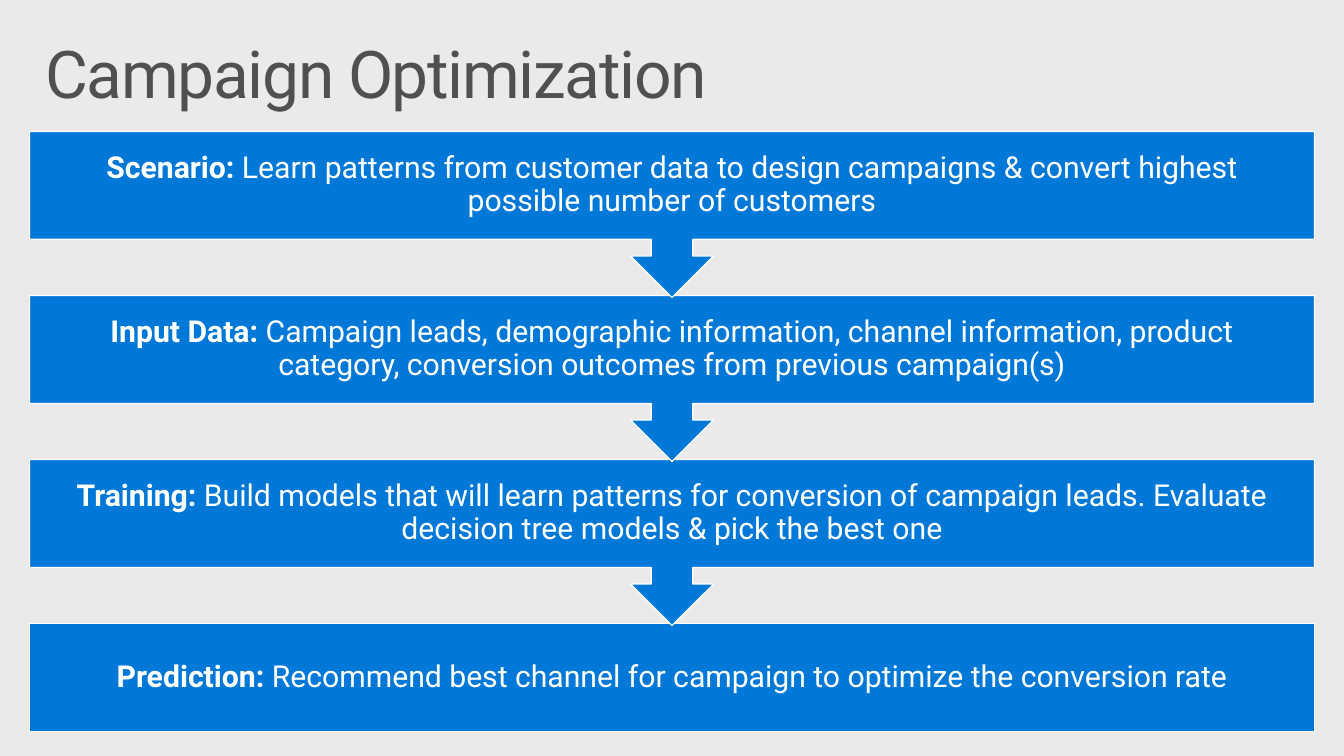
from pptx import Presentation
from pptx.dml.color import RGBColor
from pptx.enum.shapes import MSO_SHAPE
from pptx.enum.text import MSO_ANCHOR, PP_ALIGN
from pptx.util import Inches, Pt

LEFT, WIDTH = 0.3, 13
FIRST_TOP, STEP = 1.33, 1.66
BOX_HEIGHT, CALLOUT_HEIGHT = 1.09, 1.68


def color(value):
    return RGBColor.from_string(value)


def add_text(text, top, height, label="", size=22, fill="FFFFFF", align=PP_ALIGN.CENTER,
             anchor=MSO_ANCHOR.MIDDLE, side=0.17, edge=0.17, spacing=None):
    box = page.shapes.add_textbox(Inches(LEFT), Inches(top), Inches(WIDTH), Inches(height))
    frame = box.text_frame
    frame.word_wrap = True
    frame.vertical_anchor = anchor
    frame.margin_left = frame.margin_right = Inches(side)
    frame.margin_top = frame.margin_bottom = Inches(edge)
    para = frame.paragraphs[0]
    para.alignment = align
    para.line_spacing = 0.9
    for content, bold in ((label, True), (text, False)):
        if not content:
            continue
        span = para.add_run()
        span.text = content
        span.font.name = "Roboto"
        span.font.size = Pt(size)
        span.font.bold = bold
        span.font.color.rgb = color(fill)
        if spacing is not None:
            span.font._element.set("spc", str(spacing))


deck = Presentation()
deck.slide_width, deck.slide_height = Inches(13.6), Inches(7.65)
page = deck.slides.add_slide(deck.slide_layouts[6])
page.background.fill.solid()
page.background.fill.fore_color.rgb = color("EAEAEA")

# Title
add_text("Campaign Optimization", 0.32, 1, size=48, fill="505050", align=PP_ALIGN.LEFT,
         anchor=MSO_ANCHOR.TOP, side=0.16, edge=0.1, spacing=-100)

# Process steps, drawn from the last so each arrow tip overlaps the step below
steps = [
    ("Scenario:", " Learn patterns from customer data to design campaigns & convert "
                  "highest possible number of customers"),
    ("Input Data:", " Campaign leads, demographic information, channel information, product "
                    "category, conversion outcomes from previous campaign(s)"),
    ("Training:", " Build models that will learn patterns for conversion of campaign leads. "
                  "Evaluate decision tree models & pick the best one"),
    ("Prediction:", " Recommend best channel for campaign to optimize the conversion rate"),
]
last = len(steps) - 1
for index, (label, text) in reversed(list(enumerate(steps))):
    top = FIRST_TOP + index * STEP
    if index == last:
        kind, height, rotation = MSO_SHAPE.RECTANGLE, BOX_HEIGHT, 0
    else:
        kind, height, rotation = MSO_SHAPE.UP_ARROW_CALLOUT, CALLOUT_HEIGHT, 180
    step = page.shapes.add_shape(kind, Inches(LEFT), Inches(top), Inches(WIDTH), Inches(height))
    step.rotation = rotation
    step.shadow.inherit = False
    step.fill.solid()
    step.fill.fore_color.rgb = color("0078D7")
    step.line.color.rgb = color("FFFFFF")
    step.line.width = Pt(0.85)
    add_text(text, top, BOX_HEIGHT, label=label)

deck.save("out.pptx")
